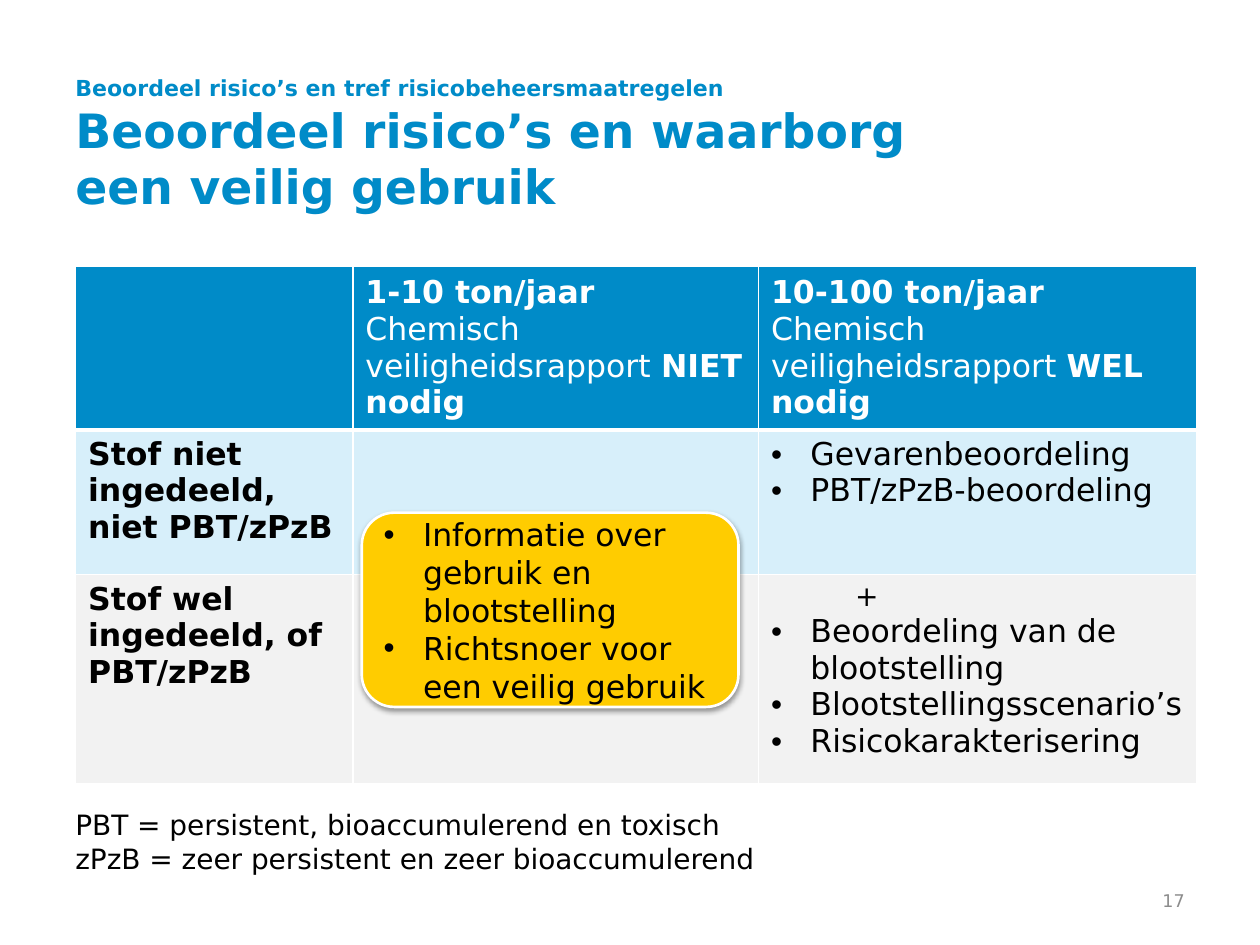
import dataclasses

import lxml.etree
import pptx
import pptx.dml.color
import pptx.enum.shapes
import pptx.enum.text
import pptx.oxml
import pptx.oxml.ns
import pptx.util

Pt = pptx.util.Pt
Anchor = pptx.enum.text.MSO_ANCHOR
Align = pptx.enum.text.PP_ALIGN


@dataclasses.dataclass(frozen=True)
class Theme:
    """Colours, type sizes and measures of the slide."""
    font: str = "DejaVu Sans"
    blue: str = "008BC8"
    pale_blue: str = "D7EFFA"
    pale_grey: str = "F2F2F2"
    yellow: str = "FFCC00"
    white: str = "FFFFFF"
    black: str = "000000"
    grey: str = "8C8C8C"
    title: float = 27
    kicker: float = 12.6
    body: float = 18
    note: float = 16
    number: float = 10
    bullet_indent: float = 22.5
    plus_indent: float = 48


THEME = Theme()


def rgb(value):
    """Turn a hex string into a colour."""
    return pptx.dml.color.RGBColor.from_string(value)


def add_child(parent, tag, **attributes):
    """Append a drawing element to its parent."""
    values = {name: str(value) for name, value in attributes.items()}
    return lxml.etree.SubElement(parent, pptx.oxml.ns.qn(tag), values)


def indent(para, left, first=0):
    """Set the left margin and first-line indent of a paragraph."""
    properties = para._p.get_or_add_pPr()
    properties.set("marL", str(Pt(left)))
    properties.set("indent", str(Pt(first)))
    return properties


def add_bullet(para):
    """Give a paragraph a hanging round bullet."""
    properties = indent(para, THEME.bullet_indent, -THEME.bullet_indent)
    add_child(properties, "a:buFont", typeface="Arial")
    add_child(properties, "a:buChar", char="•")


def style(para, size, colour, bold=None):
    """Set the font of a whole paragraph."""
    para.font.name = THEME.font
    para.font.size = Pt(size)
    para.font.color.rgb = rgb(colour)
    para.font.bold = bold


def write(frame, lines, size, colour, bold=None, bullets=False):
    """Fill a text frame; a line is a string or a list of (text, bold) spans."""
    for index, line in enumerate(lines):
        para = frame.add_paragraph() if index else frame.paragraphs[0]
        if bullets:
            add_bullet(para)
        style(para, size, colour, bold)
        spans = [(line, bold)] if isinstance(line, str) else line
        for text, weight in spans:
            span = para.add_run()
            span.text = text
            if weight != bold:
                span.font.bold = weight


def add_text(page, box, anchor=Anchor.TOP):
    """Add a wrapping text box and return its frame."""
    frame = page.shapes.add_textbox(*map(Pt, box)).text_frame
    frame.word_wrap = True
    frame.vertical_anchor = anchor
    return frame


def add_title(page, box):
    """Place the small heading above the two-line title."""
    frame = add_text(page, box, Anchor.MIDDLE)
    lines = ["Beoordeel risico’s en tref risicobeheersmaatregelen",
             "Beoordeel risico’s en waarborg", "een veilig gebruik"]
    write(frame, lines, THEME.title, THEME.blue, True)
    frame.paragraphs[0].font.size = Pt(THEME.kicker)


def paint_cell(cell, colour, top, bottom):
    """Fill a cell and draw its white borders."""
    properties = cell._tc.get_or_add_tcPr()
    for side, width in (("L", 1), ("R", 1), ("T", top), ("B", bottom)):
        line = add_child(properties, f"a:ln{side}", w=Pt(width))
        add_child(add_child(line, "a:solidFill"), "a:srgbClr", val=THEME.white)
    cell.fill.solid()
    cell.fill.fore_color.rgb = rgb(colour)


def add_requirements(page, box):
    """Place the table of requirements per tonnage band."""
    widths, heights = (158.4, 231.84, 250.56), (73.5, 82.8, 119.5)
    table = page.shapes.add_table(3, 3, *map(Pt, box)).table
    table.horz_banding = False
    for column, width in zip(table.columns, widths):
        column.width = Pt(width)
    looks = ((THEME.blue, 1, 3), (THEME.pale_blue, 3, 1), (THEME.pale_grey, 1, 1))
    for row, height, look in zip(table.rows, heights, looks):
        row.height = Pt(height)
        for cell in row.cells:
            paint_cell(cell, *look)

    report = ("Chemisch veiligheidsrapport ", False)
    headings = ([[("1-10\u00a0ton/jaar", True)], [report, ("NIET nodig", True)]],
                [[("10-100\u00a0ton/jaar ", True), report, ("WEL nodig", True)]])
    for column, lines in enumerate(headings, 1):
        cell = table.cell(0, column)
        cell.vertical_anchor = Anchor.MIDDLE
        write(cell.text_frame, lines, THEME.body, THEME.white, True)

    substances = (["Stof niet ingedeeld,", "niet PBT/zPzB"],
                  ["Stof wel ingedeeld, of", "PBT/zPzB"])
    for row, lines in enumerate(substances, 1):
        write(table.cell(row, 0).text_frame, lines, THEME.body, THEME.black, True)

    write(table.cell(1, 2).text_frame, ["Gevarenbeoordeling", "PBT/zPzB-beoordeling"],
          THEME.body, THEME.black, False, True)
    frame = table.cell(2, 2).text_frame
    write(frame, ["+"], THEME.note, THEME.black, False)
    indent(frame.paragraphs[0], THEME.plus_indent)
    for text in ("Beoordeling van de blootstelling", "Blootstellingsscenario’s",
                 "Risicokarakterisering"):
        para = frame.add_paragraph()
        add_bullet(para)
        style(para, THEME.body, THEME.black, False)
        para.add_run().text = text


def add_callout(page, box):
    """Place the yellow callout that spans both substance rows."""
    kind = pptx.enum.shapes.MSO_SHAPE.ROUNDED_RECTANGLE
    shape = page.shapes.add_shape(kind, *map(Pt, box))
    shape.fill.solid()
    shape.fill.fore_color.rgb = rgb(THEME.yellow)
    shape.line.color.rgb = rgb(THEME.white)
    shape.line.width = Pt(1.5)
    shape.shadow.inherit = False
    effects = shape._element.spPr.find(pptx.oxml.ns.qn("a:effectLst"))
    shadow = add_child(effects, "a:outerShdw", blurRad=Pt(3.1), dist=Pt(1.6),
                       dir=90 * 60000, rotWithShape=0)
    colour = add_child(shadow, "a:srgbClr", val=THEME.black)
    add_child(colour, "a:alpha", val=38000)
    frame = shape.text_frame
    frame.word_wrap = True
    frame.vertical_anchor = Anchor.MIDDLE
    lines = ["Informatie over gebruik en blootstelling",
             "Richtsnoer voor een veilig gebruik"]
    write(frame, lines, THEME.body, THEME.black, bullets=True)
    for para in frame.paragraphs:
        para.alignment = Align.LEFT


def add_abbreviations(page, box):
    """Place the explanation of the abbreviations."""
    lines = ["PBT = persistent, bioaccumulerend en toxisch",
             "zPzB = zeer persistent en zeer bioaccumulerend"]
    write(add_text(page, box), lines, THEME.note, THEME.black)


def add_page_number(page, box):
    """Place the page number at the lower right."""
    frame = add_text(page, box, Anchor.MIDDLE)
    write(frame, ["17"], THEME.number, THEME.grey)
    frame.paragraphs[0].alignment = Align.RIGHT


def main():
    """Build the slide and save the deck."""
    deck = pptx.Presentation()
    deck.slide_width, deck.slide_height = Pt(720), Pt(540)
    page = deck.slides.add_slide(deck.slide_layouts[6])
    add_page_number(page, (516, 500.5, 168, 28.75))
    add_title(page, (36, 37.5, 648, 90))
    add_requirements(page, (43.2, 152, 640.8, 275.8))
    add_abbreviations(page, (36, 458, 532, 46))
    add_callout(page, (206.75, 293, 215.25, 111))
    deck.save("out.pptx")


if __name__ == "__main__":
    main()
